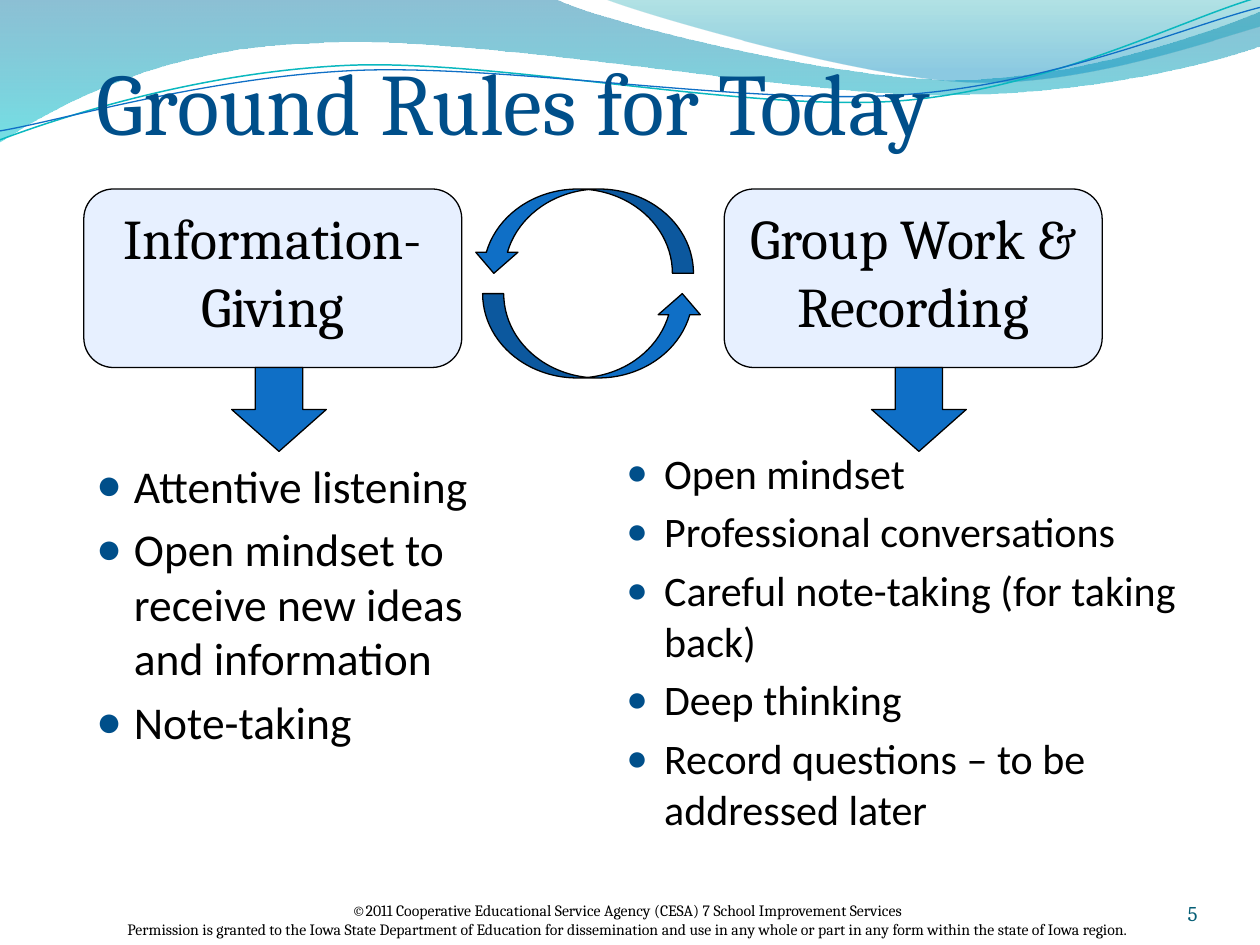
from lxml import etree
from pptx import Presentation
from pptx.dml.color import RGBColor
from pptx.enum.shapes import MSO_SHAPE as Shape
from pptx.enum.text import MSO_ANCHOR as Anchor, PP_ALIGN as Align
from pptx.oxml.ns import qn
from pptx.util import Cm, Pt

COLORS = {
    "title": "004F8A", "text": "000000", "outline": "000000",
    "card": "E7F0FF", "arrow": "0F6FC6", "number": "045D75",
    "teal line": "0AB8BF", "blue line": "0F6FC6",
    "deep blue": "0074A1", "aqua": "00C6CF", "teal": "00A1A9", "sky": "008BBF",
}

TITLE = "Ground Rules for Today"
# Card lefts, arrow lefts and list boxes are in cm
MODES = [
    {"name": "Information-Giving", "card": 1.69, "arrow": 4.67,
     "list": (1.69, 9.1, 9.09, 8.26), "size": 26, "bullet": 95,
     "rules": ["Attentive listening",
               "Open mindset to receive new ideas and information",
               "Note-taking"]},
    {"name": "Group Work & Recording", "card": 14.6, "arrow": 17.57,
     "list": (12.38, 8.89, 12.27, 10.16), "size": 24, "bullet": 85,
     "rules": ["Open mindset",
               "Professional conversations",
               "Careful note-taking (for taking back)",
               "Deep thinking",
               "Record questions – to be addressed later"]},
]
CYCLE = [((9.73, 5.92, 4.45, 1.7), 0), ((9.53, 3.81, 4.45, 1.7), 180)]
FOOTER = ("©2011 Cooperative Educational Service Agency (CESA) 7 School Improvement Services\v"
          "Permission is granted to the Iowa State Department of Education for dissemination "
          "and use in any whole or part in any form within the state of Iowa region.")
PAGE_NUMBER = "5"

# Each wave is a start point, then steps of one point (line) or three (curve), in cm.
# Gradient stops are position, colour, opacity in percent.
BANDS = [
    {"start": (0, 0),
     "steps": [[(11.18, -0.03)],
               [(12.09, 0.43), (16.87, 1.6), (19.25, 1.6)],
               [(21.67, 1.6), (24.33, 0.66), (25.4, 0.23)],
               [(25.43, 0.91)],
               [(24.97, 1.12), (22.1, 1.93), (18.95, 1.91)],
               [(15.8, 1.91), (9.7, 0.71), (6.53, 0.86)],
               [(3.28, 0.91), (1.17, 2.11), (-0.03, 2.87)],
               [(0, 0)]],
     "stops": [(0, "deep blue", 45), (1, "aqua", 55)]},
    {"start": (12.17, -0.03),
     "steps": [[(12.93, 0.28), (17.32, 1.57), (19.53, 1.65)],
               [(21.74, 1.75), (24.41, 0.81), (25.4, 0.53)],
               [(25.4, 0)],
               [(12.17, -0.03)]],
     "stops": [(0, "teal", 30), (0.8, "sky", 45)]},
]
STRANDS = [
    {"start": (-0.05, 2.22), "color": "teal line", "width": 0.85,
     "steps": [[(1.19, 1.82), (4.02, 1.04), (7.05, 1.05)],
               [(10.05, 1.07), (15.02, 2.37), (18.08, 2.29)],
               [(21.13, 2.2), (23.87, 0.91), (25.41, 0.55)]]},
    {"start": (-0.04, 2.04), "color": "blue line", "width": 0.75,
     "steps": [[(1.16, 1.9), (4.18, 1.15), (7.2, 1.16)],
               [(10.25, 1.18), (15.13, 2.25), (18.18, 2.17)],
               [(21.21, 2.1), (23.93, 1.06), (25.45, 0.75)]]},
]
STRAND_TILT = 357.3


def rgb(name):
    return RGBColor.from_string(COLORS[name])


def cm(*lengths):
    return [Cm(length) for length in lengths]


def set_all(target, values):
    for name, value in values.items():
        setattr(target, name, value)


def write(paragraph, text, size, font="Cambria", color="text", align=Align.LEFT):
    paragraph.text = text
    paragraph.alignment = align
    set_all(paragraph.font, {"size": Pt(size), "name": font})
    paragraph.font.color.rgb = rgb(color)


def outline(shape, color="outline", width=0.75):
    shape.shadow.inherit = False
    shape.line.color.rgb = rgb(color)
    shape.line.width = Pt(width)


def add_block(shapes, kind, box, fill):
    block = shapes.add_shape(kind, *cm(*box))
    block.fill.solid()
    block.fill.fore_color.rgb = rgb(fill)
    outline(block)
    return block


def add_text(shapes, box, **frame_format):
    frame = shapes.add_textbox(*cm(*box)).text_frame
    set_all(frame, {"word_wrap": True, **frame_format})
    return frame


def add_wave(shapes, start, steps, close):
    """Draw a freeform, then merge each step of three points into one cubic curve."""
    builder = shapes.build_freeform(*cm(*start))
    builder.add_line_segments([cm(*point) for step in steps for point in step], close=close)
    wave = builder.convert_to_shape()
    wave.shadow.inherit = False
    segments = iter(list(wave.element.spPr.iter(qn("a:lnTo"))))
    for step in steps:
        parts = [next(segments) for _ in step]
        if len(parts) == 3:
            curve = etree.Element(qn("a:cubicBezTo"))
            parts[0].addprevious(curve)
            for part in parts:
                curve.append(part[0])
                part.getparent().remove(part)
    return wave


def fade(shape, stops):
    """Fill top to bottom with partly transparent stops."""
    shape.fill.gradient()
    shape.fill.gradient_angle = 270
    for stop, (position, color, _) in zip(shape.fill.gradient_stops, stops):
        stop.position = position
        stop.color.rgb = rgb(color)
    for node, (_, _, opacity) in zip(shape.element.spPr.iter(qn("a:srgbClr")), stops):
        etree.SubElement(node, qn("a:alpha"), val=str(opacity * 1000))


def add_bullet(paragraph, percent):
    props = paragraph._p.get_or_add_pPr()
    indent = Cm(0.76)
    props.set("marL", str(indent))
    props.set("indent", str(-indent))
    color = etree.SubElement(props, qn("a:buClr"))
    etree.SubElement(color, qn("a:srgbClr"), val=COLORS["title"])
    etree.SubElement(props, qn("a:buSzPct"), val=str(percent * 1000))
    etree.SubElement(props, qn("a:buFont"), typeface="Arial")
    etree.SubElement(props, qn("a:buChar"), char="●")


def add_mode(shapes, mode):
    card = add_block(shapes, Shape.ROUNDED_RECTANGLE, (mode["card"], 3.81, 7.62, 3.6), "card")
    set_all(card.text_frame, {"word_wrap": True, "vertical_anchor": Anchor.MIDDLE,
                              "margin_bottom": Cm(0.41)})
    write(card.text_frame.paragraphs[0], mode["name"], 32, align=Align.CENTER)
    add_block(shapes, Shape.DOWN_ARROW, (mode["arrow"], 7.41, 1.91, 1.69), "arrow")
    frame = add_text(shapes, mode["list"])
    for index, rule in enumerate(mode["rules"]):
        paragraph = frame.add_paragraph() if index else frame.paragraphs[0]
        write(paragraph, rule, mode["size"], "Calibri")
        paragraph.space_before = Pt(mode["size"] * 0.2)
        add_bullet(paragraph, mode["bullet"])


def main():
    deck = Presentation()
    set_all(deck, {"slide_width": Cm(25.4), "slide_height": Cm(19.05)})
    slide = deck.slides.add_slide(deck.slide_layouts[5])
    shapes, title = slide.shapes, slide.shapes.title

    for band in BANDS:
        wave = add_wave(shapes, band["start"], band["steps"], close=True)
        fade(wave, band["stops"])
        wave.line.fill.background()
    for strand in STRANDS:
        wave = add_wave(shapes, strand["start"], strand["steps"], close=False)
        wave.fill.background()
        wave.rotation = STRAND_TILT
        outline(wave, strand["color"], strand["width"])

    title.element.getparent().append(title.element)  # in front of the waves
    set_all(title, dict(zip(("left", "top", "width", "height"), cm(1.69, 0.84, 21.46, 2.34))))
    set_all(title.text_frame, {"vertical_anchor": Anchor.BOTTOM, "margin_bottom": Cm(0.1)})
    write(title.text_frame.paragraphs[0], TITLE, 50, color="title")

    for mode in MODES:
        add_mode(shapes, mode)
    cycle = shapes.add_group_shape()
    for box, turn in CYCLE:
        add_block(cycle.shapes, Shape.CURVED_UP_ARROW, box, "arrow").rotation = turn

    footer = add_text(shapes, (0, 18.03, 25.27, 1.07))
    write(footer.paragraphs[0], FOOTER, 9, align=Align.CENTER)
    number = add_text(shapes, (22.02, 17.65, 2.12, 1.02), vertical_anchor=Anchor.BOTTOM,
                      margin_left=0, margin_right=0, margin_top=0, margin_bottom=0)
    write(number.paragraphs[0], PAGE_NUMBER, 12, color="number", align=Align.RIGHT)
    deck.save("out.pptx")


if __name__ == "__main__":
    main()
